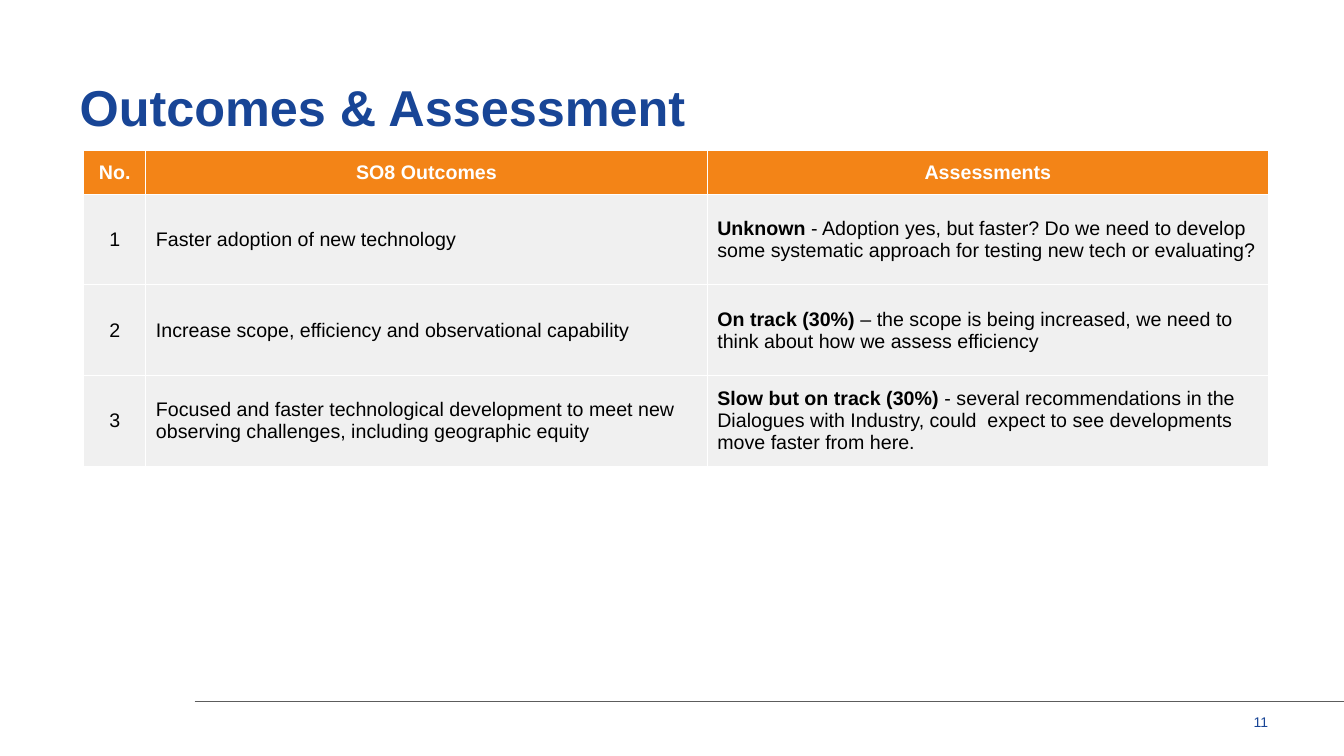
from lxml import etree
from pptx import Presentation
from pptx.dml.color import RGBColor
from pptx.enum.shapes import MSO_CONNECTOR
from pptx.enum.text import MSO_ANCHOR, PP_ALIGN
from pptx.oxml import parse_xml
from pptx.oxml.ns import nsdecls, qn
from pptx.util import Pt

BLUE = RGBColor(0x18, 0x45, 0x96)
ORANGE = RGBColor(0xF3, 0x84, 0x17)
PALE_GREY = RGBColor(0xF0, 0xF0, 0xF0)
LINE_GREY = RGBColor(0x5C, 0x5C, 0x5C)
WHITE = RGBColor(0xFF, 0xFF, 0xFF)
BLACK = RGBColor(0x00, 0x00, 0x00)
LEFT, CENTER, RIGHT = PP_ALIGN.LEFT, PP_ALIGN.CENTER, PP_ALIGN.RIGHT
TOP, MIDDLE = MSO_ANCHOR.TOP, MSO_ANCHOR.MIDDLE
STRAIGHT = MSO_CONNECTOR.STRAIGHT


def add_run(para, text, size, color, bold=False):
    span = para.add_run()
    span.text = text
    span.font.name = "Arial"
    span.font.size = Pt(size)
    span.font.bold = bold
    span.font.color.rgb = color


def add_line_of_text(page, bounds, text, size, align, anchor, spacing, bold=False):
    box = page.shapes.add_textbox(*[Pt(length) for length in bounds])
    frame = box.text_frame
    frame.word_wrap = True
    frame.vertical_anchor = anchor
    frame.margin_left = frame.margin_right = frame.margin_top = frame.margin_bottom = 0
    para = frame.paragraphs[0]
    para.alignment = align
    para.line_spacing = spacing
    add_run(para, text, size, BLUE, bold)


deck = Presentation()
deck.slide_width, deck.slide_height = Pt(960), Pt(540)
page = deck.slides.add_slide(deck.slide_layouts[6])

# Footer rule
rule = page.shapes.add_connector(STRAIGHT, Pt(139), Pt(501), Pt(960), Pt(501))
rule.line.color.rgb = LINE_GREY
rule.line.width = Pt(0.75)
etree.SubElement(rule._element.spPr, qn("a:effectLst"))

# Title and page number
add_line_of_text(page, (56.9, 56.9, 846.7, 45.4), "Outcomes & Assessment",
                 36, LEFT, MIDDLE, 0.85, bold=True)
add_line_of_text(page, (885.6, 511.2, 20.2, 15.1), "11", 10, RIGHT, TOP, 0.9)

# Outcomes table: each cell is a list of (text, bold) runs
rows = [
    [[("No.", True)], [("SO8 Outcomes", True)], [("Assessments", True)]],
    [[("1", False)],
     [("Faster adoption of new technology", False)],
     [("Unknown ", True),
      ("- Adoption yes, but faster? Do we need to develop some systematic "
       "approach for testing new tech or evaluating?", False)]],
    [[("2", False)],
     [("Increase scope, efficiency and observational capability", False)],
     [("On track (30%)", True),
      (" – the scope is being increased, we need to think about how we "
       "assess efficiency", False)]],
    [[("3", False)],
     [("Focused and faster technological development to meet new observing "
       "challenges, including geographic equity", False)],
     [("Slow but on track (30%) ", True),
      ("- several recommendations in the Dialogues with Industry, could  expect "
       "to see developments move faster from here.", False)]],
]
column_widths = [44.4, 401, 401]
row_heights = [31] + [64.8] * 3
table = page.shapes.add_table(len(rows), len(column_widths), Pt(59.8), Pt(107.5),
                              Pt(sum(column_widths)), Pt(sum(row_heights))).table
for column, width in zip(table.columns, column_widths):
    column.width = Pt(width)
for row, height in zip(table.rows, row_heights):
    row.height = Pt(height)

for row_number, row in enumerate(rows):
    header = row_number == 0
    for column_number, runs in enumerate(row):
        cell = table.cell(row_number, column_number)
        cell.vertical_anchor = MIDDLE
        cell.margin_left = cell.margin_right = Pt(7.2)
        cell.margin_top = cell.margin_bottom = Pt(7.2)
        # White borders go in ahead of the fill
        properties = cell._tc.get_or_add_tcPr()
        for side in ("lnL", "lnR", "lnT", "lnB"):
            properties.append(parse_xml(
                f'<a:{side} {nsdecls("a")} w="{Pt(0.75)}"><a:solidFill>'
                f'<a:srgbClr val="{WHITE}"/></a:solidFill></a:{side}>'))
        cell.fill.solid()
        cell.fill.fore_color.rgb = ORANGE if header else PALE_GREY
        para = cell.text_frame.paragraphs[0]
        para.alignment = CENTER if header or column_number == 0 else LEFT
        for text, bold in runs:
            add_run(para, text, 14, WHITE if header else BLACK, bold)

deck.save("out.pptx")
